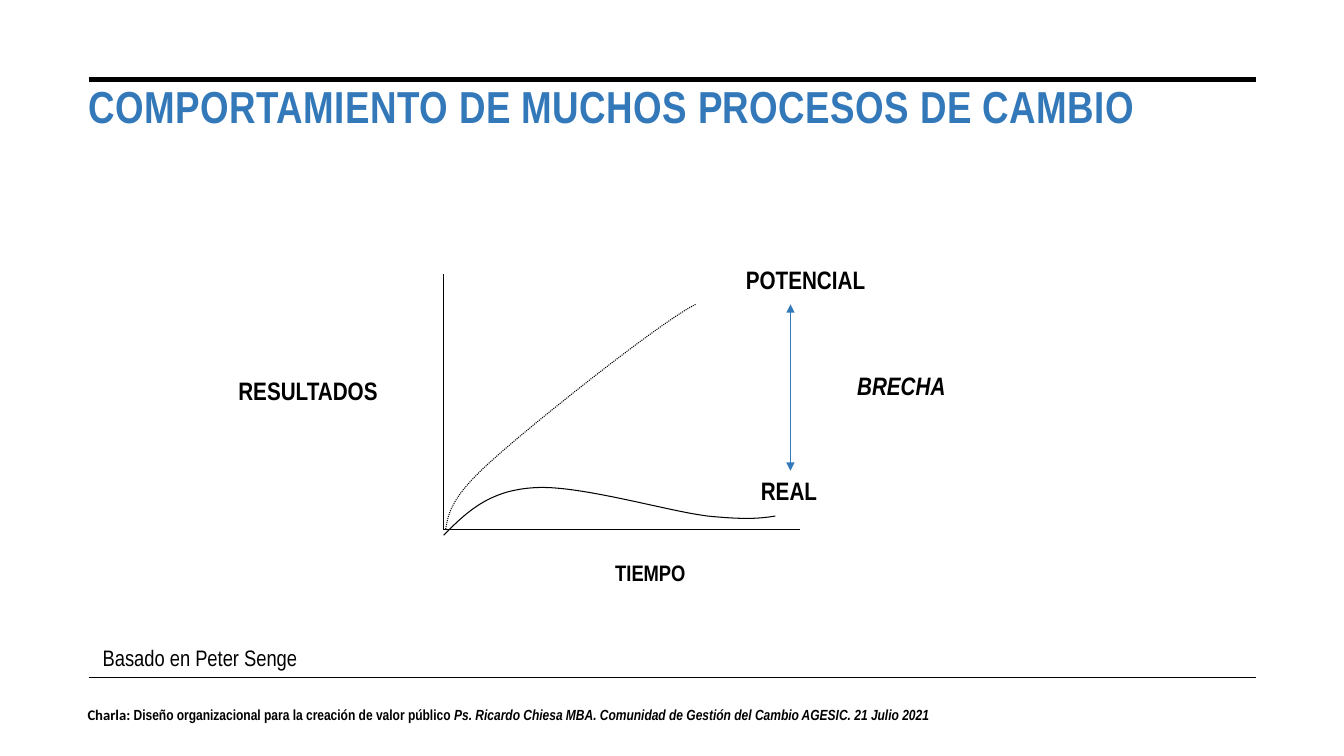
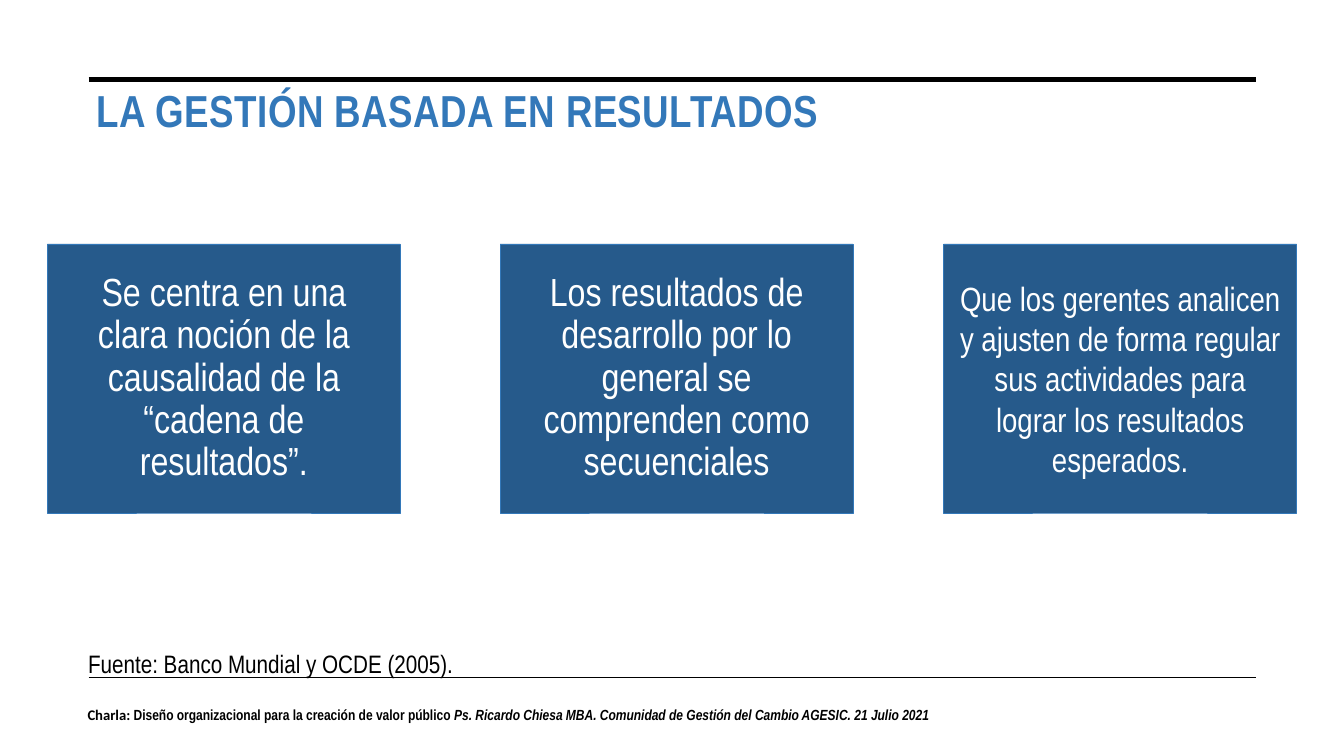
from lxml import etree
from pptx import Presentation
from pptx.dml.color import RGBColor
from pptx.enum.dml import MSO_LINE
from pptx.enum.shapes import MSO_CONNECTOR, MSO_SHAPE
from pptx.enum.text import MSO_ANCHOR, MSO_AUTO_SIZE, PP_ALIGN
from pptx.oxml.ns import qn
from pptx.util import Pt

SCALE = 9144
FONT = "Arial Narrow"
HUES = {"ink": "000000", "blue": "3378B9", "navy": "265A8B", "white": "FFFFFF"}
LEFT, MID = PP_ALIGN.LEFT, PP_ALIGN.CENTER
TOP, CORE, BASE = MSO_ANCHOR.TOP, MSO_ANCHOR.MIDDLE, MSO_ANCHOR.BOTTOM
FIXED = MSO_AUTO_SIZE.NONE
STRAIGHT, RECT = MSO_CONNECTOR.STRAIGHT, MSO_SHAPE.RECTANGLE
DOTS = MSO_LINE.ROUND_DOT


def emu(*nums):
    """Turn px into EMU."""
    return [round(n * SCALE) for n in nums]


def hue(name):
    """Look up a colour."""
    return RGBColor.from_string(HUES[name])


def add_run(para, text, size, color="ink", bold=False, slant=False, font=FONT):
    """Add one formatted run to a paragraph."""
    run = para.add_run()
    run.text = text
    face = run.font
    face.name, face.size = font, Pt(size)
    face.bold, face.italic = bold, slant
    face.color.rgb = hue(color)
    return run


def set_frame(shape, align, anchor, pad=(10, 5)):
    """Prepare the text frame and return its first paragraph."""
    frame = shape.text_frame
    frame.word_wrap, frame.auto_size = True, FIXED
    frame.vertical_anchor = anchor
    frame.margin_left = frame.margin_right = pad[0] * SCALE
    frame.margin_top = frame.margin_bottom = pad[1] * SCALE
    para = frame.paragraphs[0]
    para.alignment = align
    return para


def add_label(slide, box, text, size=18, align=MID, **style):
    """Add a one-run text box."""
    para = set_frame(slide.shapes.add_textbox(*emu(*box)), align, TOP)
    add_run(para, text, size, **style)


def add_rule(slide, ends, width, color="ink", heads=False):
    """Add a straight line, with arrowheads on request."""
    rule = slide.shapes.add_connector(STRAIGHT, *emu(*ends))
    rule.line.width = Pt(width)
    rule.line.color.rgb = hue(color)
    if heads:
        for tag in ("a:headEnd", "a:tailEnd"):
            tip = etree.SubElement(rule.line._get_or_add_ln(), qn(tag))
            tip.set("type", "triangle")
    etree.SubElement(rule._element.spPr, qn("a:effectLst"))


def bend(knots, steps=24):
    """List EMU points along joined cubic curves."""
    spots = [emu(*knots[0])]
    for i in range(0, len(knots) - 1, 3):
        part = knots[i:i + 4]
        for k in range(1, steps + 1):
            t = k / steps
            u = 1 - t
            rates = (u ** 3, 3 * u * u * t, 3 * u * t * t, t ** 3)
            spots.append(emu(*(sum(r * p[n] for r, p in zip(rates, part))
                               for n in (0, 1))))
    return spots


def add_curve(slide, knots, dash=None):
    """Draw an open curve."""
    spots = bend(knots)
    pen = slide.shapes.build_freeform(*spots[0], scale=1.0)
    pen.add_line_segments(spots[1:], close=False)
    curve = pen.convert_to_shape()
    curve.shadow.inherit = False
    curve.fill.background()
    curve.line.color.rgb = hue("ink")
    curve.line.width = Pt(0.75)
    if dash:
        curve.line.dash_style = dash


def add_card(slide, left, text, size, gap):
    """Add a filled card with centred text."""
    card = slide.shapes.add_shape(RECT, *emu(left, 242, 350, 267))
    card.shadow.inherit = False
    card.fill.solid()
    card.fill.fore_color.rgb = hue("navy")
    card.line.color.rgb = hue("blue")
    card.line.width = Pt(0.25)
    para = set_frame(card, MID, CORE, (16, 9))
    para.line_spacing = gap
    add_run(para, text, size, "white")


def add_page(deck, title, box, anchor):
    """Add a slide with its title, rules and footer."""
    slide = deck.slides.add_slide(deck.slide_layouts[5])
    head = slide.shapes.title
    head.left, head.top, head.width, head.height = emu(*box)
    run = add_run(set_frame(head, LEFT, anchor), title, 32, "blue", True)
    run.font._element.set("spc", "30")
    for y, width in ((79, 3.5), (672, 1)):
        add_rule(slide, (88, y, 1246, y), width)
    foot = slide.shapes.add_textbox(*emu(77, 695, 953, 47))
    para = set_frame(foot, LEFT, TOP)
    add_run(para, "Charla: ", 10.5, bold=True, font="Calibri")
    add_run(para, "Diseño organizacional para la creación de valor público ",
            10.5, bold=True)
    add_run(para, "Ps. Ricardo Chiesa MBA. Comunidad de Gestión del Cambio "
            "AGESIC. 21 Julio 2021", 10.5, bold=True, slant=True)
    return slide


def add_change(deck):
    """Build the slide on change processes."""
    slide = add_page(deck, "COMPORTAMIENTO DE MUCHOS PROCESOS DE CAMBIO",
                     (78, -14, 1169, 150), BASE)
    add_rule(slide, (440, 272, 440, 526), 0.75)
    add_rule(slide, (440, 525, 793, 525), 0.75)
    add_curve(slide, [(440, 531), (462, 509), (484, 487), (528, 484),
                      (571, 480), (661, 507), (702, 512),
                      (742, 516), (756, 514), (769, 512)])
    add_curve(slide, [(442, 525), (445, 508), (448, 492), (490, 455),
                      (531, 418), (657, 318), (690, 302)], DOTS)
    add_rule(slide, (784, 302, 784, 467), 0.5, "blue", True)
    for text, box, size, slant in (
            ("POTENCIAL", (674, 257, 250, 40), 18, False),
            ("REAL", (674, 467, 217, 40), 18, False),
            ("TIEMPO", (549, 550, 192, 37), 16, False),
            ("RESULTADOS", (212, 367, 187, 40), 18, False),
            ("BRECHA", (769, 362, 250, 40), 18, True)):
        add_label(slide, box, text, size, bold=True, slant=slant)
    add_label(slide, (92, 634, 397, 37), "Basado en Peter Senge", 16, LEFT)


def add_results(deck):
    """Build the slide on results-based management."""
    slide = add_page(deck, "LA GESTIÓN BASADA EN RESULTADOS",
                     (86, 34, 1169, 150), CORE)
    add_label(slide, (45, 638, 447, 57), "Fuente: Banco Mundial y OCDE (2005).")
    for left, text, size, gap in (
            (47, "Se centra en una clara noción de la causalidad de la "
             "“cadena de resultados”.", 28, 0.9),
            (496, "Los resultados de desarrollo por lo general se "
             "comprenden como secuenciales", 28, 0.9),
            (936, "Que los gerentes analicen y ajusten de forma regular sus "
             "actividades para lograr los resultados esperados.", 24, 1.0)):
        add_card(slide, left, text, size, gap)


def main():
    """Build and save the deck."""
    deck = Presentation()
    deck.slide_width, deck.slide_height = emu(1333, 750)
    add_change(deck)
    add_results(deck)
    deck.save("out.pptx")


if __name__ == "__main__":
    main()
